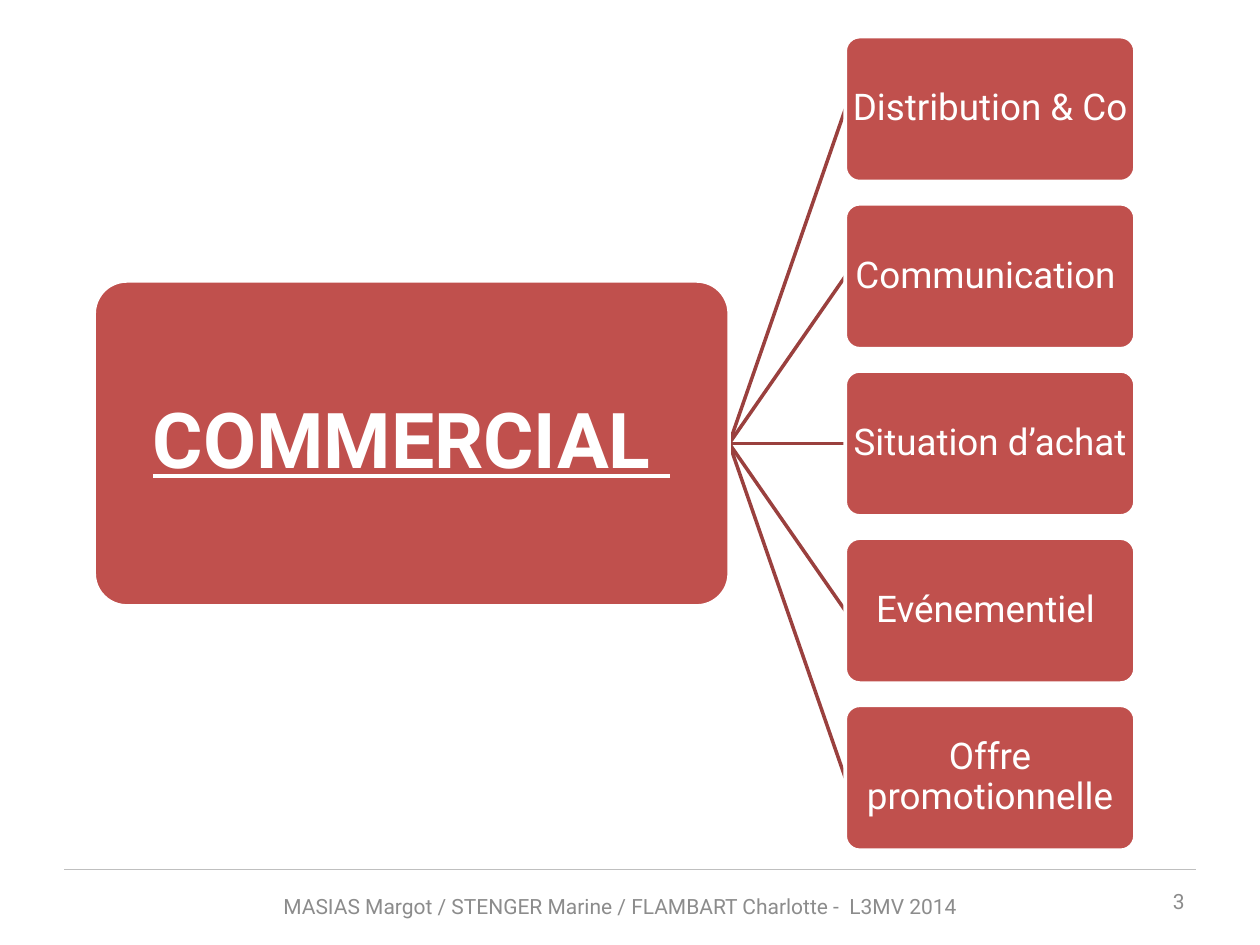
"""Builds the slide that splits the commercial theme into five branches."""
from lxml.etree import SubElement
from pptx import Presentation
from pptx.dml.color import RGBColor
from pptx.enum.shapes import MSO_CONNECTOR as Link, MSO_SHAPE as Kind
from pptx.enum.text import MSO_ANCHOR as Anchor, PP_ALIGN as Align
from pptx.oxml.ns import qn
from pptx.util import Cm, Pt

RED, DARK, WHITE, GREY, RULE = "C0504D", "9A403E", "FFFFFF", "8C8C8C", "BFBFBF"


def write(shape, text, size=12, color=GREY, align=Align.CENTER, bold=None,
          under=None, inset=None, space=None):
    frame = shape.text_frame
    frame.word_wrap = True
    frame.vertical_anchor = Anchor.MIDDLE
    if inset is not None:
        frame.margin_left = frame.margin_right = Cm(inset)
        frame.margin_top = frame.margin_bottom = Cm(inset)
    par = frame.paragraphs[0]
    par.alignment, par.line_spacing = align, space
    run = par.add_run()
    run.text = text
    font = run.font
    font.name, font.size = "Roboto", Pt(size)
    font.bold, font.underline = bold, under
    font.color.rgb = RGBColor.from_string(color)


deck = Presentation()
deck.slide_width, deck.slide_height = Cm(25.4), Cm(19.05)
slide = deck.slides.add_slide(deck.slide_layouts[6])
shapes = slide.shapes

names = ["Distribution & Co", "Communication ", "Situation d’achat",
         "Evénementiel ", "Offre promotionnelle"]
left, top, wide, high, step = 17.04, 0.74, 5.84, 2.92, 3.37
mids = [top + high / 2 + step * i for i in range(len(names))]
hub, edge = mids[2], 14.7

lines = [(1.3, 17.53, 24.1, 17.53, RULE, 0.75)]
lines += [(edge, hub, left, mid, DARK, 2) for mid in mids]
for x1, y1, x2, y2, color, width in lines:
    line = shapes.add_connector(Link.STRAIGHT, Cm(x1), Cm(y1), Cm(x2), Cm(y2))
    line.line.color.rgb = RGBColor.from_string(color)
    line.line.width = Pt(width)
    SubElement(line._element.spPr, qn("a:effectLst"))

boxes = [("COMMERCIAL ", 1.9, hub, 12.8, 6.55,
          dict(size=44, bold=True, under=True, inset=0.08))]
boxes += [(name, left, mid, wide, high, dict(size=21, inset=0.03))
          for name, mid in zip(names, mids)]
for name, x, mid, w, h, style in boxes:
    box = shapes.add_shape(Kind.ROUNDED_RECTANGLE, Cm(x), Cm(mid - h / 2), Cm(w), Cm(h))
    box.adjustments[0] = 0.1
    box.shadow.inherit = False
    box.fill.solid()
    box.fill.fore_color.rgb = RGBColor.from_string(RED)
    box.line.color.rgb = RGBColor.from_string(WHITE)
    box.line.width = Pt(2)
    write(box, name, color=WHITE, space=0.9, **style)

foot = shapes.add_textbox(Cm(3.91), Cm(17.93), Cm(17.2), Cm(0.66))
write(foot, "MASIAS Margot / STENGER Marine / FLAMBART Charlotte -  L3MV 2014")
page = shapes.add_textbox(Cm(18.21), Cm(17.65), Cm(5.92), Cm(1.02))
write(page, "3", align=Align.RIGHT)

deck.save("out.pptx")
